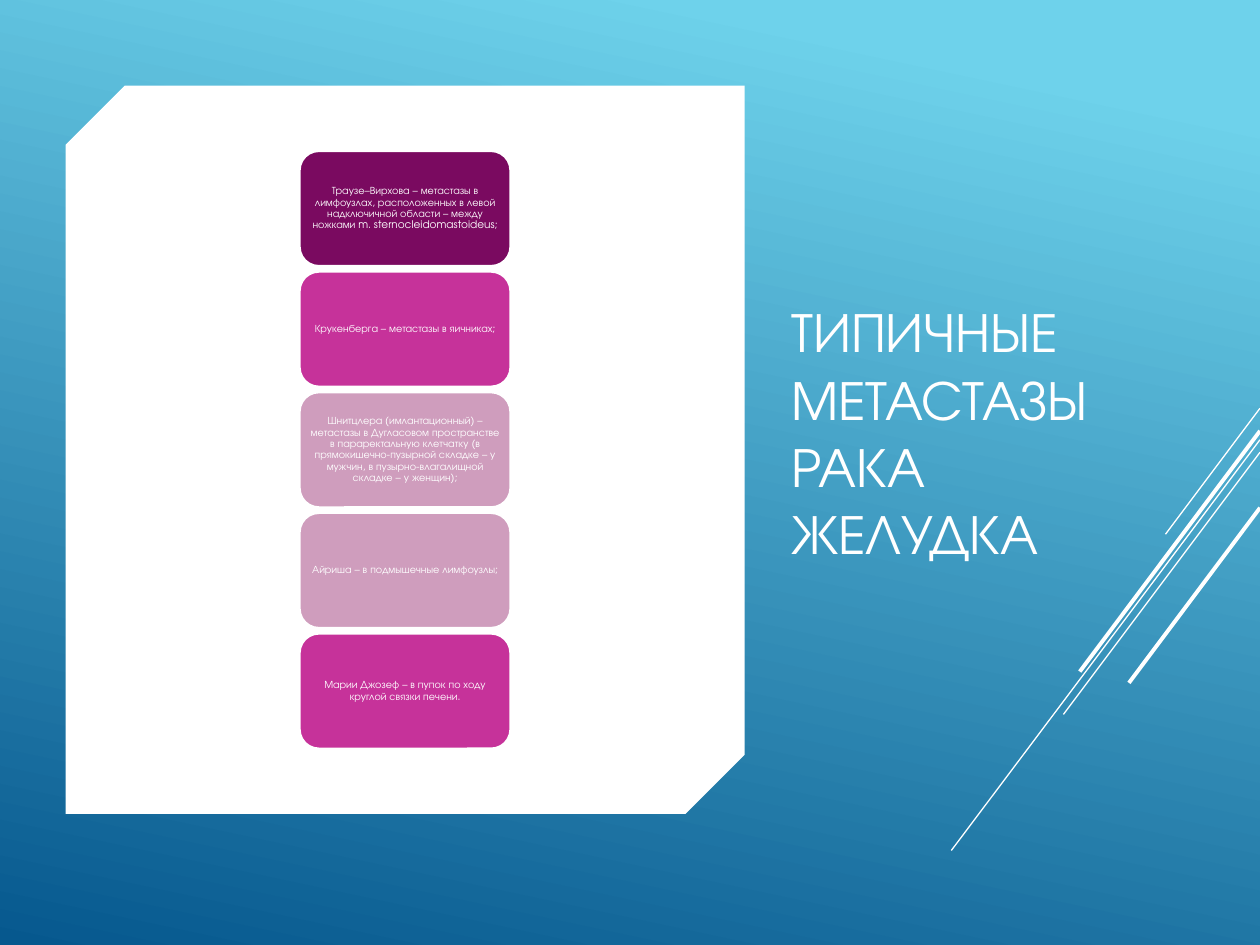
from pptx import Presentation, util as u
from pptx.dml.color import RGBColor
from pptx.enum import shapes, text
from pptx.oxml.ns import qn
from lxml import etree

WHITE = RGBColor(0xFF, 0xFF, 0xFF)
SKY = RGBColor(0x6E, 0xD2, 0xEB)
NAVY = RGBColor(0x06, 0x58, 0x8E)
PLUM = RGBColor(0x7A, 0x0A, 0x60)
PINK = RGBColor(0xC6, 0x32, 0x9A)
ROSE = RGBColor(0xCF, 0x9D, 0xBD)
FONT = "TeX Gyre Adventor"
Inches = u.Inches


def write(frame, words, size, align, anchor, space=1.0, pad=(0.1, 0.05)):
    frame.word_wrap = True
    frame.auto_size = text.MSO_AUTO_SIZE.NONE
    frame.vertical_anchor = anchor
    frame.margin_left = frame.margin_right = Inches(pad[0])
    frame.margin_top = frame.margin_bottom = Inches(pad[1])
    para = frame.paragraphs[0]
    para.alignment = align
    para.line_spacing = space
    run = para.add_run()
    run.text = words
    run.font.size = u.Pt(size)
    run.font.name = FONT
    run.font.color.rgb = WHITE


def block(kind, left, top, width, height):
    shape = slide.shapes.add_shape(
        kind, Inches(left), Inches(top), Inches(width), Inches(height))
    shape.shadow.inherit = False
    shape.line.fill.background()
    return shape


deck = Presentation()
deck.slide_width, deck.slide_height = Inches(10), Inches(7.5)
slide = deck.slides.add_slide(deck.slide_layouts[5])
kinds = shapes.MSO_SHAPE

back = block(kinds.RECTANGLE, 0, 0, 10, 7.5)
back.fill.gradient()
back.fill.gradient_angle = 360 - 102
for stop, (place, color) in zip(back.fill.gradient_stops, [(0.1, SKY), (1, NAVY)]):
    stop.position = place
    stop.color.rgb = color

panel = block(kinds.SNIP_2_DIAG_RECTANGLE, 0.52, 0.68, 5.39, 5.78)
panel.adjustments[0] = 0.087
panel.adjustments[1] = 0
panel.fill.solid()
panel.fill.fore_color.rgb = WHITE

rays = [
    (10, 3.24, 9.25, 4.24, 0.75),
    (10, 3.49, 7.55, 6.75, 0.75),
    (10, 3.59, 8.44, 5.67, 0.75),
    (10, 3.42, 8.57, 5.33, 2.25),
    (10, 4.03, 8.96, 5.42, 2.25),
]
for *ends, width in rays:
    ray = slide.shapes.add_connector(
        shapes.MSO_CONNECTOR.STRAIGHT, *[Inches(end) for end in ends])
    ray.line.color.rgb = WHITE
    ray.line.width = u.Pt(width)
    etree.SubElement(ray._element.spPr, qn("a:effectLst"))

title = slide.shapes.title
title.left, title.top = Inches(6.18), Inches(0.68)
title.width, title.height = Inches(3), Inches(3.86)
write(title.text_frame, "ТИПИЧНЫЕ МЕТАСТАЗЫ РАКА ЖЕЛУДКА", 32,
      text.PP_ALIGN.LEFT, text.MSO_ANCHOR.BOTTOM)
slide.shapes._spTree.append(title._element)

cards = [
    (PLUM, "Траузе–Вирхова – метастазы в лимфоузлах, расположенных в левой "
           "надключичной области – между ножками m. sternocleidomastoideus;"),
    (PINK, "Крукенберга – метастазы в яичниках;"),
    (ROSE, "Шнитцлера (имлантационный) – метастазы в Дугласовом пространстве "
           "в параректальную клетчатку (в прямокишечно-пузырной складке – "
           "у мужчин, в пузырно-влагалищной складке – у женщин);"),
    (ROSE, "Айриша – в подмышечные лимфоузлы;"),
    (PINK, "Марии Джозеф – в пупок по ходу круглой связки печени."),
]
step = (5.03 - 1.2) / 4
for row, (color, words) in enumerate(cards):
    card = block(kinds.ROUNDED_RECTANGLE, 2.38, 1.2 + row * step, 1.67, 0.91)
    card.fill.solid()
    card.fill.fore_color.rgb = color
    card.line.color.rgb = WHITE
    card.line.width = u.Pt(1)
    write(card.text_frame, words, 6, text.PP_ALIGN.CENTER,
          text.MSO_ANCHOR.MIDDLE, space=0.9, pad=(0.03, 0.01))

deck.save("out.pptx")
